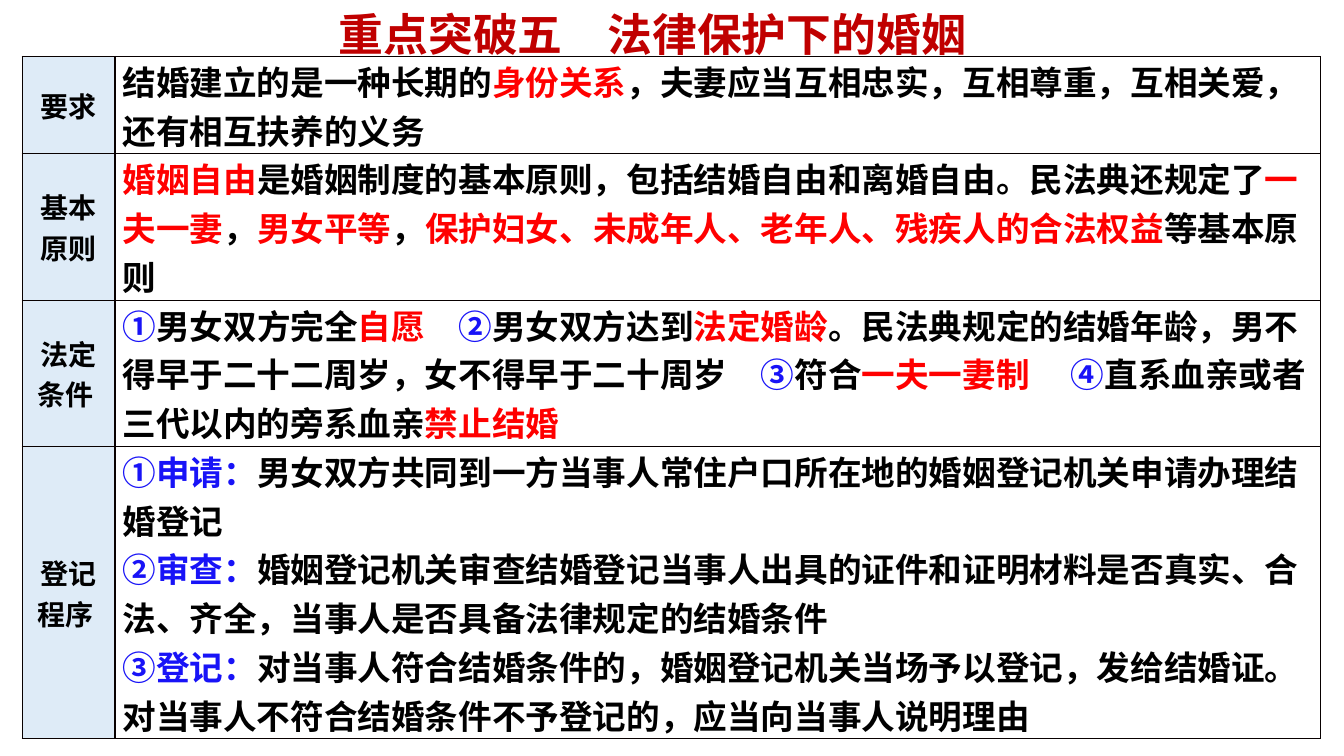
from lxml import etree
from pptx import Presentation
from pptx.dml.color import RGBColor
from pptx.enum.text import MSO_ANCHOR, MSO_AUTO_SIZE, PP_ALIGN
from pptx.oxml.ns import qn
from pptx.util import Cm, Pt

MIDDLE, TOP = MSO_ANCHOR.MIDDLE, MSO_ANCHOR.TOP
CENTER, LEFT = PP_ALIGN.CENTER, PP_ALIGN.LEFT
NO_AUTOFIT = MSO_AUTO_SIZE.NONE

BLACK = RGBColor(0x00, 0x00, 0x00)
RED = RGBColor(0xFF, 0x00, 0x00)
BLUE = RGBColor(0x18, 0x13, 0xF7)
DARK_RED = RGBColor(0xC0, 0x00, 0x00)
PALE_BLUE = RGBColor(0xDE, 0xEB, 0xF7)
BORDER = RGBColor(0x08, 0x00, 0x00)

FONT = "Noto Sans CJK SC"
TITLE_SIZE, TOPIC_SIZE, DETAIL_SIZE = Pt(32), Pt(20), Pt(24)
TITLE = "重点突破五　法律保护下的婚姻"
TITLE_BOX = {"left": Cm(8.28), "top": Cm(0.03), "width": Cm(18.16), "height": Cm(1.63)}
TITLE_FRAME = {"auto_size": NO_AUTOFIT, "word_wrap": True, "vertical_anchor": TOP}
CELL_FORMAT = {"margin_left": Cm(0.19), "margin_right": Cm(0.19),
               "margin_top": 0, "margin_bottom": 0, "vertical_anchor": MIDDLE}
COLUMN_WIDTHS = [Cm(2.34), Cm(30.38)]

MARRIAGE_RULES = [
    ("要求", Cm(2.31), [
        [("结婚建立的是一种长期的", BLACK), ("身份关系", RED),
         ("，夫妻应当互相忠实，互相尊重，互相关爱，还有相互扶养的义务", BLACK)],
    ]),
    ("基本原则", Cm(3.05), [
        [("婚姻自由", RED),
         ("是婚姻制度的基本原则，包括结婚自由和离婚自由。民法典还规定了", BLACK),
         ("一夫一妻", RED), ("，", BLACK), ("男女平等", RED), ("，", BLACK),
         ("保护妇女、未成年人、老年人、残疾人的合法权益", RED), ("等基本原则", BLACK)],
    ]),
    ("法定条件 ", Cm(3.05), [
        [("①", BLUE), ("男女双方完全", BLACK), ("自愿　", RED),
         ("②", BLUE), ("男女双方达到", BLACK), ("法定婚龄", RED),
         ("。民法典规定的结婚年龄，男不得早于二十二周岁，女不得早于二十周岁　", BLACK),
         ("③", BLUE), ("符合", BLACK), ("一夫一妻制　 ", RED),
         ("④", BLUE), ("直系血亲或者三代以内的旁系血亲", BLACK), ("禁止结婚", RED)],
    ]),
    ("登记程序 ", Cm(6.1), [
        [("①申请：", BLUE),
         ("男女双方共同到一方当事人常住户口所在地的婚姻登记机关申请办理结婚登记", BLACK)],
        [("②审查：", BLUE),
         ("婚姻登记机关审查结婚登记当事人出具的证件和证明材料是否真实、合法、齐全，"
          "当事人是否具备法律规定的结婚条件", BLACK)],
        [("③登记：", BLUE),
         ("对当事人符合结婚条件的，婚姻登记机关当场予以登记，发给结婚证。"
          "对当事人不符合结婚条件不予登记的，应当向当事人说明理由", BLACK)],
    ]),
]


def apply_format(target, values):
    for name, value in values.items():
        setattr(target, name, value)


def write_runs(paragraph, runs, size, alignment):
    paragraph.alignment = alignment
    for text, color in runs:
        run = paragraph.add_run()
        run.text = text
        apply_format(run.font, {"size": size, "bold": True, "name": FONT})
        run.font.color.rgb = color
        east_asian = etree.SubElement(run.font._element, qn("a:ea"))
        east_asian.set("typeface", FONT)


def add_borders(cell):
    properties = cell._tc.get_or_add_tcPr()
    for position, side in enumerate(("a:lnL", "a:lnR", "a:lnT", "a:lnB")):
        line = etree.Element(qn(side), w=str(Pt(1)))
        fill = etree.SubElement(line, qn("a:solidFill"))
        etree.SubElement(fill, qn("a:srgbClr"), val=str(BORDER))
        properties.insert(position, line)


def fill_cell(cell, paragraphs, size, alignment, background=None):
    apply_format(cell, CELL_FORMAT)
    if background is None:
        cell.fill.background()
    else:
        cell.fill.solid()
        cell.fill.fore_color.rgb = background
    add_borders(cell)
    frame = cell.text_frame
    for index, runs in enumerate(paragraphs):
        paragraph = frame.add_paragraph() if index else frame.paragraphs[0]
        write_runs(paragraph, runs, size, alignment)


def add_title(slide):
    title = slide.shapes.title
    apply_format(title, TITLE_BOX)
    apply_format(title.text_frame, TITLE_FRAME)
    write_runs(title.text_frame.paragraphs[0], [(TITLE, DARK_RED)], TITLE_SIZE, LEFT)


def add_rules_table(slide):
    total_height = sum(height for _, height, _ in MARRIAGE_RULES)
    rules = slide.shapes.add_table(
        len(MARRIAGE_RULES), len(COLUMN_WIDTHS),
        Cm(0.56), Cm(1.42), sum(COLUMN_WIDTHS), total_height).table
    apply_format(rules, {"first_row": False, "horz_banding": False})
    for column, width in zip(rules.columns, COLUMN_WIDTHS):
        column.width = width
    for index, (topic, height, details) in enumerate(MARRIAGE_RULES):
        rules.rows[index].height = height
        fill_cell(rules.cell(index, 0), [[(topic, BLACK)]], TOPIC_SIZE, CENTER, PALE_BLUE)
        fill_cell(rules.cell(index, 1), details, DETAIL_SIZE, LEFT)


def main():
    presentation = Presentation()
    apply_format(presentation, {"slide_width": Cm(33.87), "slide_height": Cm(19.05)})
    slide = presentation.slides.add_slide(presentation.slide_layouts[5])
    add_rules_table(slide)
    add_title(slide)
    presentation.save("out.pptx")


if __name__ == "__main__":
    main()
